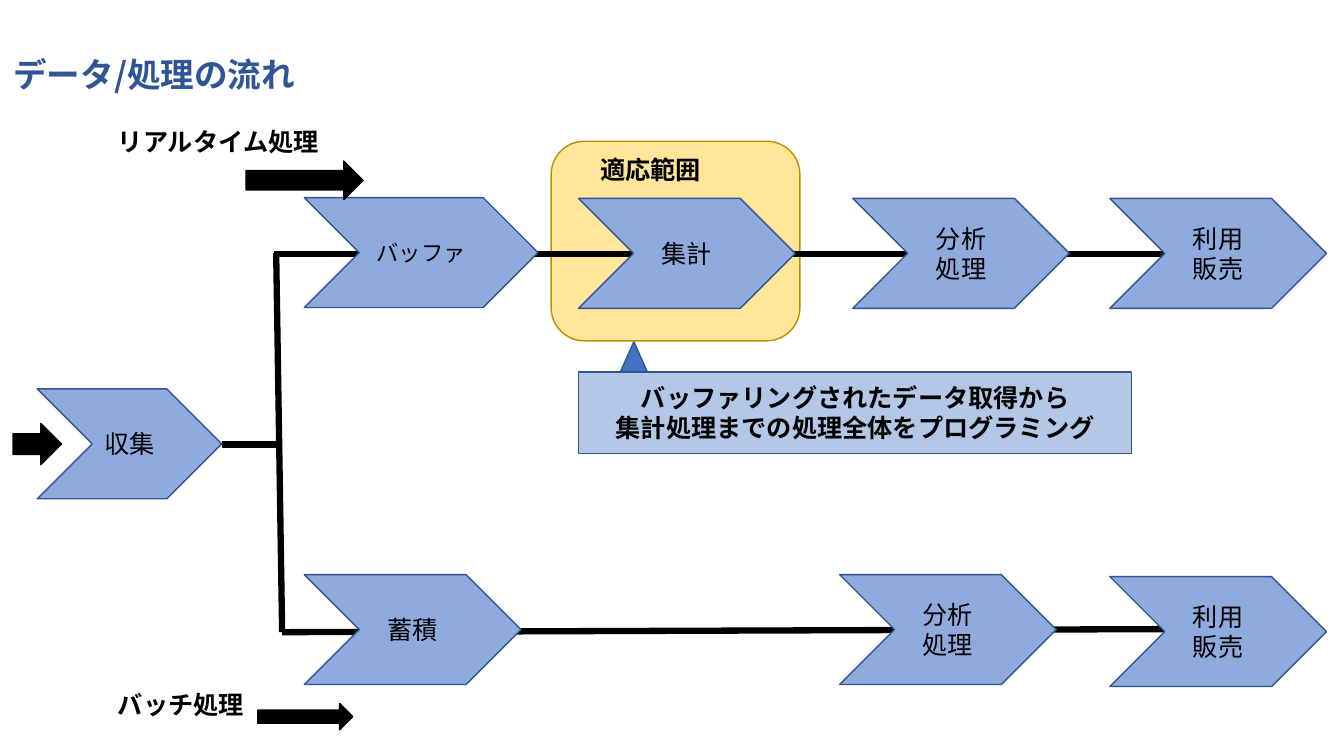
from lxml import etree
from pptx import Presentation
from pptx.dml.color import RGBColor
from pptx.enum.shapes import MSO_CONNECTOR, MSO_SHAPE
from pptx.enum.text import MSO_ANCHOR, MSO_AUTO_SIZE, PP_ALIGN
from pptx.oxml.ns import qn
from pptx.util import Cm, Pt

STRAIGHT = MSO_CONNECTOR.STRAIGHT
CHEVRON, ARROW = MSO_SHAPE.CHEVRON, MSO_SHAPE.RIGHT_ARROW
ROUNDED, RECTANGLE = MSO_SHAPE.ROUNDED_RECTANGLE, MSO_SHAPE.RECTANGLE
TRIANGLE = MSO_SHAPE.ISOSCELES_TRIANGLE
TOP, MIDDLE = MSO_ANCHOR.TOP, MSO_ANCHOR.MIDDLE
LEFT, CENTER = PP_ALIGN.LEFT, PP_ALIGN.CENTER
NO_FIT = MSO_AUTO_SIZE.NONE
FONT = "Noto Sans CJK JP"
BLACK, NAVY = "000000", "325491"
STAGE_WIDTH, STAGE_HEIGHT = 5.46, 2.77


def paint(color_format, color):
    """Apply a hex colour to a font, fill or line colour."""
    color_format.rgb = RGBColor.from_string(color)


def write(frame, lines, size=18, bold=False, color=BLACK, align=LEFT, anchor=TOP):
    """Write one paragraph per line into a text frame."""
    frame.word_wrap = True
    frame.auto_size = NO_FIT
    frame.vertical_anchor = anchor
    for index, line in enumerate(lines):
        paragraph = frame.add_paragraph() if index else frame.paragraphs[0]
        paragraph.alignment = align
        run = paragraph.add_run()
        run.text = line
        run.font.name, run.font.size, run.font.bold = FONT, Pt(size), bold
        paint(run.font.color, color)
        etree.SubElement(run.font._element, qn("a:ea"), typeface=FONT)


def add_block(slide, kind, box, fill, outline=NAVY):
    """Add a filled, outlined shape in a box given in centimetres."""
    block = slide.shapes.add_shape(kind, *map(Cm, box))
    block.shadow.inherit = False
    block.fill.solid()
    paint(block.fill.fore_color, fill)
    paint(block.line.color, outline)
    block.line.width = Pt(1)
    return block


def add_flow(slide, start, end):
    """Add a thick black line between two points."""
    flow = slide.shapes.add_connector(STRAIGHT, *map(Cm, start + end))
    paint(flow.line.color, BLACK)
    flow.line.width = Pt(4.5)
    etree.SubElement(flow._element.spPr, qn("a:effectLst"))


def add_label(slide, box, text):
    """Add a bold heading in a text box."""
    label = slide.shapes.add_textbox(*map(Cm, box))
    write(label.text_frame, [text], bold=True)


def add_stage(slide, left, top, lines, width=STAGE_WIDTH, size=18):
    """Add one chevron stage of the process."""
    stage = add_block(slide, CHEVRON, (left, top, width, STAGE_HEIGHT), "8FAADC")
    write(stage.text_frame, lines, size, align=CENTER, anchor=MIDDLE)


def add_title(slide, left, top):
    """Place and format the title."""
    title = slide.shapes.title
    title.left, title.top, title.width, title.height = map(Cm, (left, top, 9.12, 1.27))
    write(title.text_frame, ["データ/処理の流れ"], 24, True, "2F5597")


def add_scope(slide, left, top):
    """Add the highlighted scope with its explanation below."""
    add_block(slide, TRIANGLE, (left + 1.68, top + 5.05, 0.81, 0.91), "4472C4")
    add_block(slide, ROUNDED, (left, top, 6.27, 5.03), "FFE699", "BD8E00")
    add_label(slide, (left + 0.99, top + 0.2, 3.73, 1.02), "適応範囲")
    note = add_block(slide, RECTANGLE, (left + 0.69, top + 5.81, 13.94, 2.06), "B4C7E7")
    explanation = ["バッファリングされたデータ取得から", "集計処理までの処理全体をプログラミング"]
    write(note.text_frame, explanation, bold=True, align=CENTER, anchor=MIDDLE)


def add_realtime_lane(slide, left, top):
    """Add the real-time lane from buffer to use."""
    add_flow(slide, (left + 4.19, top + 3.35), (left + 26.64, top + 3.35))
    add_stage(slide, left + 4.95, top + 1.93, ["バッファ"], 5.89, 16)
    stages = (11.86, ["集計"]), (18.77, ["分析", "処理"]), (25.25, ["利用", "販売"])
    for offset, lines in stages:
        add_stage(slide, left + offset, top + 1.95, lines)
    add_block(slide, ARROW, (left + 3.48, top + 1.01, 2.95, 0.97), BLACK, BLACK)
    add_label(slide, (left, top, 6.48, 1.02), "リアルタイム処理")


def add_batch_lane(slide, left, top):
    """Add the batch lane from storage to use."""
    add_flow(slide, (left + 4.39, top + 1.45), (left + 27.38, top + 1.37))
    stages = (4.95, 0, ["蓄積"]), (18.44, 0, ["分析", "処理"]), (25.25, 0.05, ["利用", "販売"])
    for offset, drop, lines in stages:
        add_stage(slide, left + offset, top + drop, lines)
    add_block(slide, ARROW, (left + 3.78, top + 3.25, 2.39, 0.66), BLACK, BLACK)
    add_label(slide, (left, top + 2.77, 5.23, 1.04), "バッチ処理")


def add_collection(slide, left, top):
    """Add the collection stage and the branch into both lanes."""
    add_stage(slide, left + 0.61, top, ["収集"], 4.65)
    add_block(slide, ARROW, (left, top + 0.87, 1.22, 1.04), BLACK, BLACK)
    add_flow(slide, (left + 6.78, top + 6.13), (left + 6.63, top - 3.42))
    add_flow(slide, (left + 5.26, top + 1.4), (left + 6.66, top + 1.4))


def main():
    """Build the slide and save it."""
    deck = Presentation()
    deck.slide_width, deck.slide_height = Cm(33.87), Cm(19.05)
    slide = deck.slides.add_slide(deck.slide_layouts.get_by_name("Title Only"))
    add_title(slide, 0.08, 1.24)
    add_scope(slide, 13.89, 3.56)
    add_realtime_lane(slide, 2.72, 3.05)
    add_batch_lane(slide, 2.72, 14.48)
    add_collection(slide, 0.33, 9.8)
    deck.save("out.pptx")


if __name__ == "__main__":
    main()
